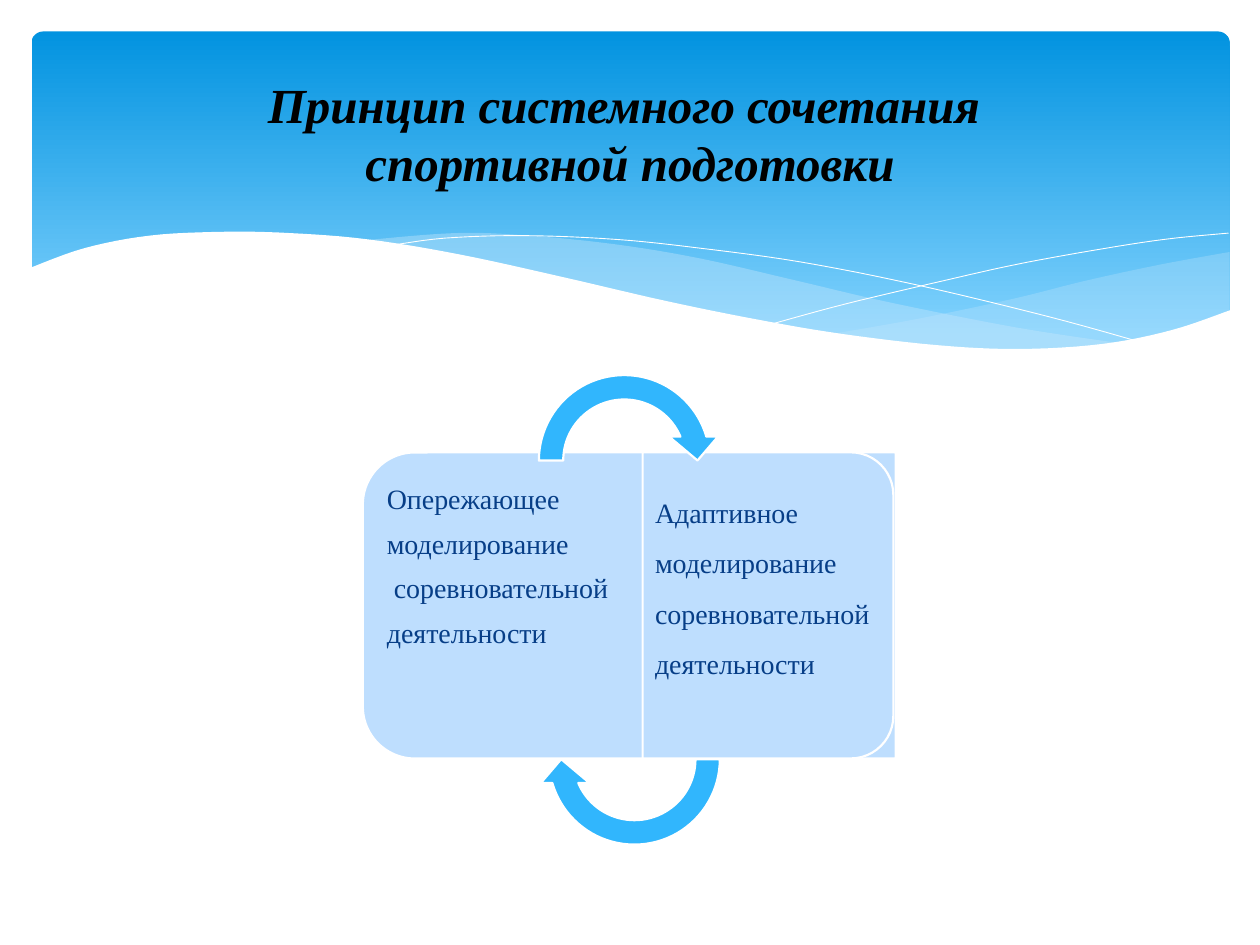
from pptx import Presentation
from pptx.dml.color import RGBColor
from pptx.enum.shapes import MSO_SHAPE as SHAPE
from pptx.enum.text import MSO_ANCHOR as ANCHOR, PP_ALIGN as ALIGN
from pptx.oxml.ns import qn
from pptx.util import Inches, Pt
from lxml.etree import SubElement

SKY_TOP = RGBColor(0x02, 0x93, 0xE0)
SKY_BOTTOM = RGBColor(0x83, 0xD3, 0xFE)
WAVE = RGBColor(0xC6, 0xE7, 0xFC)
PANEL = RGBColor(0xBE, 0xDE, 0xFE)
ARROW = RGBColor(0x31, 0xB6, 0xFD)
NAVY = RGBColor(0x07, 0x3E, 0x87)
WHITE = RGBColor(0xFF, 0xFF, 0xFF)
BLACK = RGBColor(0x00, 0x00, 0x00)
FONT = "Times New Roman"
STEPS = 6


def smooth(knots):
    """Points of a Catmull-Rom curve through the knots."""
    ends = [knots[0]] + knots + [knots[-1]]
    pts = [knots[0]]
    for a, b, c, d in zip(ends, ends[1:], ends[2:], ends[3:]):
        for i in range(1, STEPS + 1):
            t = i / STEPS
            pts.append(tuple(
                (2 * q + (r - p) * t + (2 * p - 5 * q + 4 * r - s) * t ** 2
                 + (3 * q - p - 3 * r + s) * t ** 3) / 2
                for p, q, r, s in zip(a, b, c, d)))
    return pts


def add_text(box, insets, lines, font, para):
    """Text box with one paragraph per line."""
    tf = slide.shapes.add_textbox(*map(Inches, box)).text_frame
    tf.word_wrap = True
    for side, inset in zip(("left", "top", "right", "bottom"), insets):
        setattr(tf, f"margin_{side}", Inches(inset))
    for i, line in enumerate(lines):
        p = tf.add_paragraph() if i else tf.paragraphs[0]
        p.text = line
        for name, value in para.items():
            setattr(p, name, value)
        for r in p.runs:
            r.font.color.rgb = font["color"]
            for name, value in font["format"].items():
                setattr(r.font, name, value)
    return tf


prs = Presentation()
prs.slide_width, prs.slide_height = Inches(10), Inches(7.5)
slide = prs.slides.add_slide(prs.slide_layouts[6])

# Blue gradient header
sp = slide.shapes.add_shape(SHAPE.ROUNDED_RECTANGLE, Inches(0.25), Inches(0.25),
                            Inches(9.51), Inches(2.7))
sp.shadow.inherit = False
sp.adjustments[0] = 0.034
sp.line.fill.background()
sp.fill.gradient()
sp.fill.gradient_angle = 270
for stop, color, pos in zip(sp.fill.gradient_stops, (SKY_TOP, SKY_BOTTOM), (0, 0.9)):
    stop.color.rgb = color
    stop.position = pos

# Waves: smooth edges, fill, opacity in percent (no fill means a thin line)
right_wave = [
    [(9.76, 2), (9.21, 2.1), (8.61, 2.23), (8.05, 2.37), (7.29, 2.53), (6.61, 2.65)],
    [(6.61, 2.65), (7.19, 2.72), (7.69, 2.77), (8.14, 2.78), (8.63, 2.75),
     (9.05, 2.69), (9.42, 2.59), (9.76, 2.47)],
]
long_wave = [
    [(8.93, 2.73), (8.07, 2.6), (7.06, 2.4), (6.29, 2.22), (5.55, 2.05),
     (4.89, 1.94), (4.2, 1.87), (3.61, 1.85), (2.86, 1.91)],
    [(2.86, 1.91), (3.62, 2.03), (4.49, 2.22), (5.3, 2.4), (6.01, 2.55),
     (6.65, 2.66), (7.36, 2.75), (7.96, 2.78), (8.48, 2.77), (8.93, 2.73)],
]
falling_line = [
    [(3.09, 1.95), (3.53, 1.89), (4.16, 1.87), (4.89, 1.9), (5.56, 1.97),
     (6.36, 2.08), (7.27, 2.26), (8.31, 2.51), (9.07, 2.72)],
]
rising_line = [
    [(6.13, 2.57), (6.72, 2.41), (7.48, 2.23), (8.06, 2.1), (8.66, 1.99),
     (9.24, 1.9), (9.75, 1.85)],
]
white_wave = [
    [(9.77, 2.46), (9.3, 2.62), (8.75, 2.73), (8.09, 2.77), (7.44, 2.74),
     (6.68, 2.65), (6.03, 2.54), (5.29, 2.39), (4.47, 2.2), (3.65, 2.02),
     (2.92, 1.9), (2.3, 1.85), (1.77, 1.84), (1.19, 1.87), (0.67, 1.97), (0.23, 2.13)],
    [(0.23, 3.29)],
    [(9.77, 3.29)],
]
for edges, color, opacity in (
        (right_wave, WAVE, 29), (long_wave, WAVE, 40), (falling_line, None, 100),
        (rising_line, None, 100), (white_wave, WHITE, 100)):
    pts = [(Inches(x), Inches(y)) for edge in edges for x, y in smooth(edge)]
    fb = slide.shapes.build_freeform(*pts[0])
    fb.add_line_segments(pts[1:], close=color is not None)
    sp = fb.convert_to_shape()
    sp.shadow.inherit = False
    if color is None:
        sp.fill.background()
        sp.line.color.rgb = WHITE
        sp.line.width = Pt(0.5)
        continue
    sp.line.fill.background()
    sp.fill.solid()
    sp.fill.fore_color.rgb = color
    if opacity < 100:
        clr = sp.fill._xPr.find(".//" + qn("a:srgbClr"))
        SubElement(clr, qn("a:alpha"), val=str(opacity * 1000))

# Two panels and the circular arrows between them
TAB, CIRCLE = SHAPE.ROUND_2_SAME_RECTANGLE, SHAPE.CIRCULAR_ARROW
TAB_ADJ, CIRCLE_ADJ = (0.17, 0), (0.125, 11.42, 204.58, 108, 0.125)
for kind, box, turn, color, adj in (
        (TAB, (3.78, 2.69, 2.43, 4.23), 270, PANEL, TAB_ADJ),
        (TAB, (4.88, 3.81, 2.43, 1.99), 90, PANEL, TAB_ADJ),
        (CIRCLE, (4.18, 2.88, 1.55, 1.55), 0, ARROW, CIRCLE_ADJ),
        (CIRCLE, (4.26, 5.25, 1.55, 1.55), 180, ARROW, CIRCLE_ADJ)):
    sp = slide.shapes.add_shape(kind, *map(Inches, box))
    sp.shadow.inherit = False
    sp.rotation = turn
    for i, value in enumerate(adj):
        sp.adjustments[i] = value
    sp.fill.solid()
    sp.fill.fore_color.rgb = color
    sp.line.color.rgb = WHITE
    sp.line.width = Pt(1.25)

# Panel texts
body = {"color": NAVY, "format": {"name": FONT, "size": Pt(16)}}
add_text((3, 3.71, 4.11, 2.19), (0.07, 0.11, 0.1, 0.11),
         ["Опережающее", "моделирование", " соревновательной", "деятельности"],
         body, {"space_after": Pt(6.4)})
add_text((5.1, 3.69, 1.89, 2.23), (0.1, 0.11, 0.07, 0.11),
         ["Адаптивное моделирование соревновательной деятельности"],
         body, {"line_spacing": 1.5, "space_after": Pt(6.4)})

# Title
heading = {"color": BLACK,
           "format": {"name": FONT, "size": Pt(28), "bold": True, "italic": True}}
tf = add_text((0.5, 0.37, 9, 1.37), (0.1, 0.05, 0.1, 0.05),
              ["Принцип системного сочетания \vспортивной подготовки"],
              heading, {"alignment": ALIGN.CENTER})
tf.vertical_anchor = ANCHOR.MIDDLE

prs.save("out.pptx")
